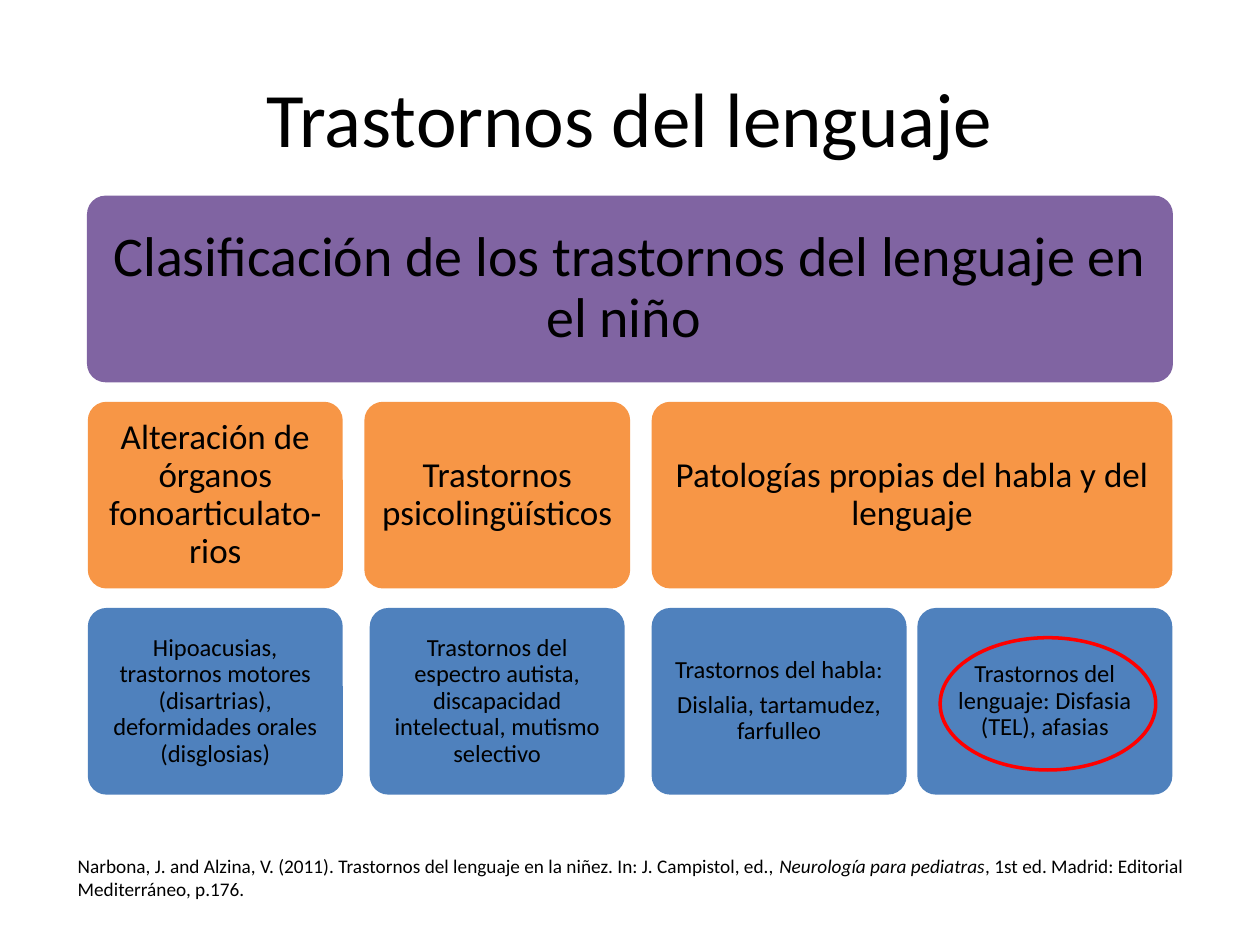
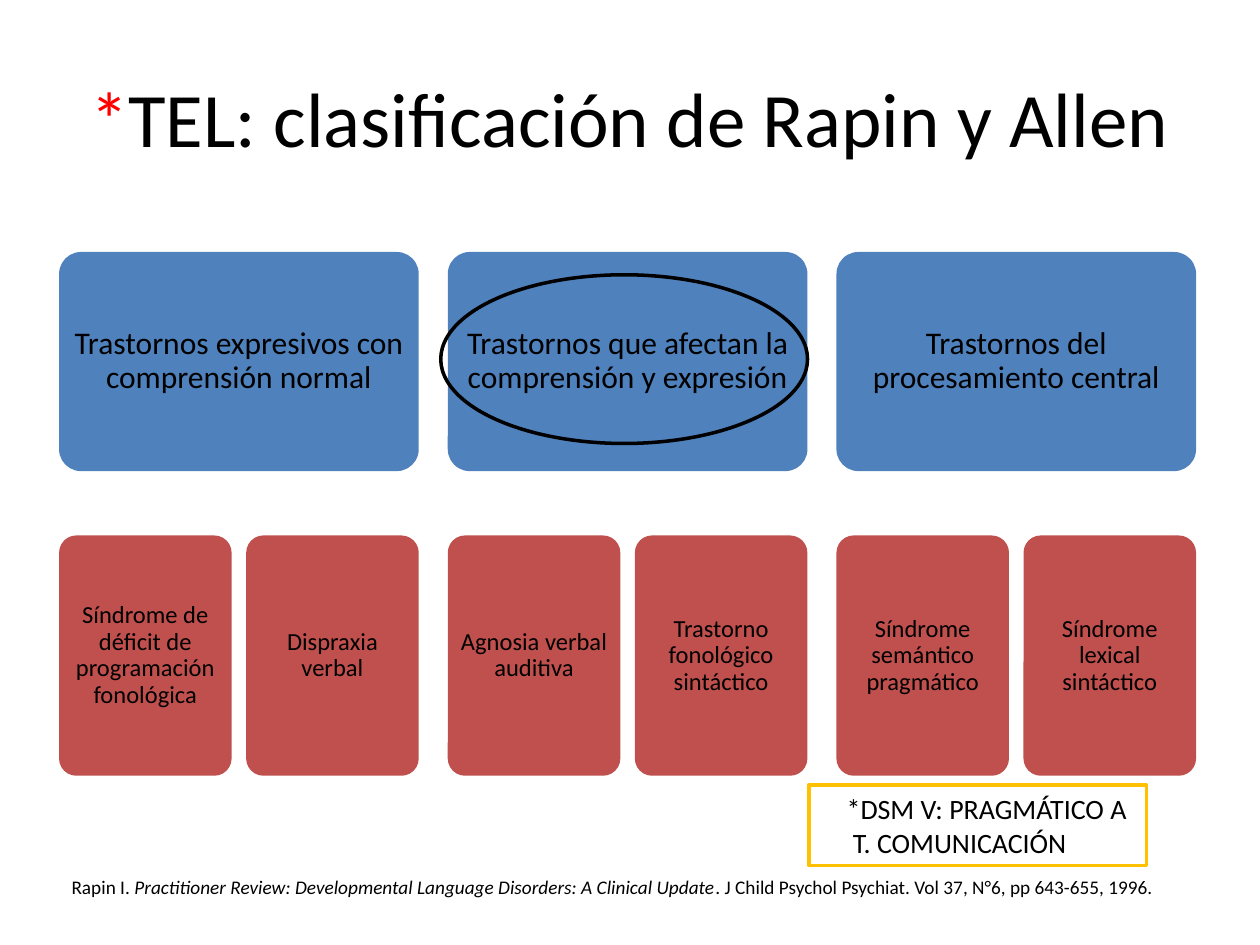
from collections import namedtuple
from dataclasses import dataclass

from pptx import Presentation
from pptx.dml.color import RGBColor
from pptx.enum.shapes import MSO_SHAPE
from pptx.enum.text import MSO_ANCHOR, PP_ALIGN
from pptx.util import Pt

ROUND, RECT = MSO_SHAPE.ROUNDED_RECTANGLE, MSO_SHAPE.RECTANGLE
OVAL = MSO_SHAPE.FLOWCHART_CONNECTOR
MIDDLE = MSO_ANCHOR.MIDDLE
CENTER, LEFT = PP_ALIGN.CENTER, PP_ALIGN.LEFT
TITLE_ONLY = 5

Box = namedtuple("Box", "x y w h")
Row = namedtuple("Row", "y h fill size inset")
Group = namedtuple("Group", "text leaves extra", defaults=[0])


@dataclass(frozen=True)
class Theme:
    font: str = "Calibri"
    ink: str = "000000"
    red: str = "FF0000"
    gold: str = "FFC000"
    purple: str = "8064A2"
    orange: str = "F79646"
    blue: str = "4F81BD"
    brick: str = "C0504D"
    title: int = 44
    head: int = 32
    large: int = 20
    medium: int = 18
    note: int = 16
    small: int = 14
    cite: int = 11
    stroke: int = 2


THEME = Theme()


def add_run(para, text, size, color=THEME.ink, italic=False):
    run = para.add_run()
    run.text = text
    run.font.name = THEME.font
    run.font.size = Pt(size)
    run.font.italic = italic
    run.font.color.rgb = RGBColor.from_string(color)


def add_lines(frame, text, size, align):
    """Write one paragraph per line and return the paragraphs."""
    for count, line in enumerate(text.split("\n")):
        para = frame.add_paragraph() if count else frame.paragraphs[0]
        para.alignment = align
        add_run(para, line, size)
    return frame.paragraphs


def set_inset(frame, left, top, right, bottom):
    frame.margin_left, frame.margin_top = Pt(left), Pt(top)
    frame.margin_right, frame.margin_bottom = Pt(right), Pt(bottom)


def add_form(slide, kind, box, fill=None, line=None):
    form = slide.shapes.add_shape(kind, *map(Pt, box))
    form.shadow.inherit = False
    if fill:
        form.fill.solid()
        form.fill.fore_color.rgb = RGBColor.from_string(fill)
    else:
        form.fill.background()
    if line:
        form.line.color.rgb = RGBColor.from_string(line)
        form.line.width = Pt(THEME.stroke)
    else:
        form.line.fill.background()
    return form


def add_card(slide, box, text, row):
    card = add_form(slide, ROUND, box, fill=row.fill)
    card.adjustments[0] = 0.1
    frame = card.text_frame
    frame.word_wrap = True
    frame.vertical_anchor = MIDDLE
    set_inset(frame, *[row.inset] * 4)
    for para in add_lines(frame, text, row.size, CENTER):
        para.line_spacing = 0.9
        para.space_after = Pt(0.35 * row.size)
    return card


def add_tree(slide, box, groups, upper, lower, leaf, gap):
    """Draw group cards with their leaves centred below; return both lists."""
    tops, ends = [], []
    x = box.x
    for group in groups:
        count = len(group.leaves)
        span = count * leaf + (count - 1) * gap
        width = span + group.extra
        place = Box(x, box.y + upper.y, width, upper.h)
        tops.append(add_card(slide, place, group.text, upper))
        for col, text in enumerate(group.leaves):
            left = x + group.extra / 2 + col * (leaf + gap)
            place = Box(left, box.y + lower.y, leaf, lower.h)
            ends.append(add_card(slide, place, text, lower))
        x += width + 2 * gap
    return tops, ends


def add_ring(slide, card, shift, color):
    """Circle a card; shift is measured from the card's corner."""
    box = Box(card.left.pt + shift.x, card.top.pt + shift.y, shift.w, shift.h)
    add_form(slide, OVAL, box, line=color)


def add_cite(slide, box, before, work, after):
    frame = slide.shapes.add_textbox(*map(Pt, box)).text_frame
    frame.word_wrap = True
    para = frame.paragraphs[0]
    add_run(para, before, THEME.cite)
    add_run(para, work, THEME.cite, italic=True)
    add_run(para, after, THEME.cite)


def add_note(slide, box, text):
    frame = add_form(slide, RECT, box, line=THEME.gold).text_frame
    frame.word_wrap = True
    frame.vertical_anchor = MIDDLE
    set_inset(frame, 21.6, 3.6, 0, 3.6)
    add_lines(frame, text, THEME.note, LEFT)


def start_slide(deck, *parts):
    """Add a slide whose title is made of (text, colour) parts."""
    slide = deck.slides.add_slide(deck.slide_layouts[TITLE_ONLY])
    title = slide.shapes.title
    title.left, title.top = Pt(36), Pt(21.6)
    title.width, title.height = Pt(648), Pt(90)
    title.text_frame.vertical_anchor = MIDDLE
    para = title.text_frame.paragraphs[0]
    para.alignment = CENTER
    for text, color in parts:
        add_run(para, text, THEME.title, color)
    return slide


def build_types(deck):
    slide = start_slide(deck, ("Trastornos del lenguaje", THEME.ink))
    box = Box(50.2, 111.8, 619.6, 342.4)
    high, step = 106.7, 117.8
    head = Row(0, high, THEME.purple, THEME.head, 9.4)
    upper = Row(step, high, THEME.orange, THEME.large, 5.8)
    lower = Row(2 * step, high, THEME.blue, THEME.small, 4.2)
    add_card(slide, Box(box.x - 0.5, box.y, box.w + 1, high),
             "Clasificación de los trastornos del lenguaje en el niño ", head)
    groups = [
        Group("Alteración de órganos fonoarticulato-rios",
              ["Hipoacusias, trastornos motores (disartrias), "
               "deformidades orales (disglosias)"]),
        Group("Trastornos psicolingüísticos",
              ["Trastornos del espectro autista, discapacidad intelectual, "
               "mutismo selectivo"], 6.2),
        Group("Patologías propias del habla y del lenguaje",
              ["Trastornos del habla:\nDislalia, tartamudez, farfulleo",
               "Trastornos del lenguaje: Disfasia (TEL), afasias"]),
    ]
    ends = add_tree(slide, box, groups, upper, lower, 145.7, 6.15)[1]
    add_cite(slide, Box(37.3, 484.6, 673.2, 33.8),
             "Narbona, J. and Alzina, V. (2011). Trastornos del lenguaje en la "
             "niñez. In: J. Campistol, ed., ", "Neurología para pediatras",
             ", 1st ed. Madrid: Editorial Mediterráneo, p.176.")
    add_ring(slide, ends[-1], Box(13, 17, 123.2, 75.6), THEME.red)


def build_rapin(deck):
    slide = start_slide(deck, ("*", THEME.red),
                        ("TEL: clasificación de Rapin y Allen", THEME.ink))
    upper = Row(0, 125.2, THEME.blue, THEME.medium, 5)
    lower = Row(162, 137.3, THEME.brick, THEME.small, 4.2)
    groups = [
        Group("Trastornos expresivos con comprensión normal",
              ["Síndrome de déficit de programación fonológica",
               "Dispraxia verbal"]),
        Group("Trastornos que afectan la comprensión y expresión",
              ["Agnosia verbal auditiva", "Trastorno fonológico sintáctico"]),
        Group("Trastornos del procesamiento central",
              ["Síndrome semántico pragmático", "Síndrome lexical sintáctico"]),
    ]
    tops = add_tree(slide, Box(33.8, 144, 650, 299.3), groups,
                    upper, lower, 98.6, 8.3)[0]
    add_cite(slide, Box(33.8, 496.8, 638, 33.8), "Rapin I. ",
             "Practitioner Review: Developmental Language Disorders: "
             "A Clinical Update",
             ". J Child Psychol Psychiat. Vol 37, N°6, pp 643-655, 1996.")
    add_ring(slide, tops[1], Box(-4, 13, 209.6, 96.4), THEME.ink)
    add_note(slide, Box(462.2, 448.6, 193, 46),
             "*DSM V: PRAGMÁTICO A\n T. COMUNICACIÓN")


def main():
    deck = Presentation()
    deck.slide_width, deck.slide_height = Pt(720), Pt(540)
    build_types(deck)
    build_rapin(deck)
    deck.save("out.pptx")


if __name__ == "__main__":
    main()
